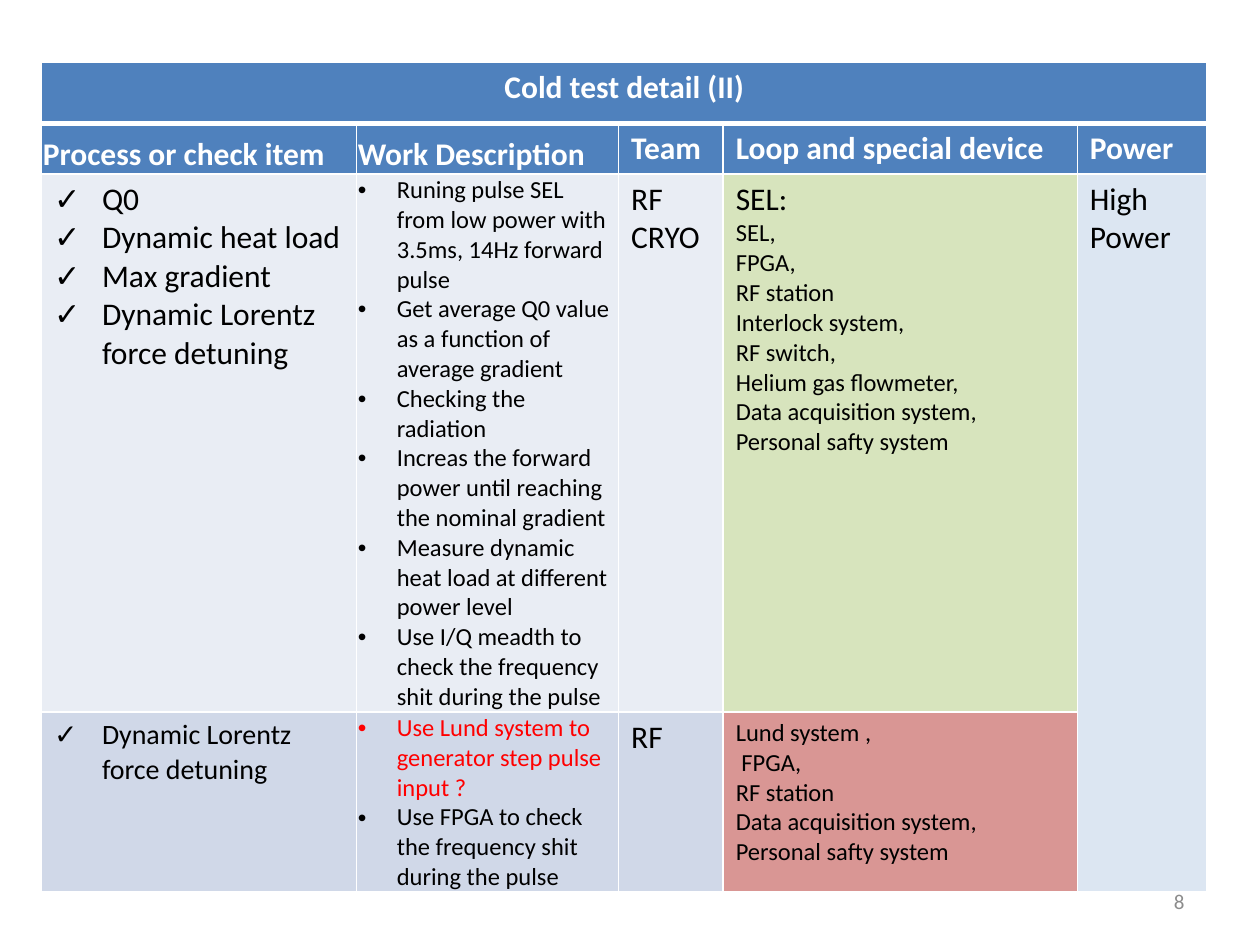
from lxml import etree
from pptx import Presentation
from pptx.dml.color import RGBColor
from pptx.enum.text import MSO_ANCHOR as Anchor, PP_ALIGN as Align
from pptx.oxml.ns import qn
from pptx.util import Inches, Pt

BLUE, WHITE, BLACK, RED, GRAY = "4F81BD", "FFFFFF", "000000", "FF0000", "8C8C8C"
PALE, BAND, GREEN, ROSE, SKY = "E9EDF4", "D0D8E8", "D7E4BD", "D99694", "DCE6F2"
CHECK, DOT = ("✓", 0.38), ("•", 0.31)
COLUMN_WIDTHS = [2.5, 2.08, 0.83, 2.81, 1.03]
ROW_HEIGHTS = [0.49, 0.4, 4.27, 1.43]

HEADERS = ["Process or check item", "Work Description", "Team",
           "Loop and special device", "Power"]
CHECKS = ["Q0", "Dynamic heat load", "Max gradient", "Dynamic Lorentz force detuning"]
PULSE_STEPS = [
    "Runing pulse SEL from low power with 3.5ms, 14Hz forward pulse",
    "Get average Q0 value as a function of average gradient",
    "Checking the radiation",
    "Increas the forward power until reaching the nominal gradient",
    "Measure dynamic heat load at different power level",
    "Use I/Q meadth to check the frequency shit during the pulse",
]
SEL_DEVICES = ["SEL,", "FPGA,", "RF station", "Interlock system,", "RF switch,",
               "Helium gas flowmeter,", "Data acquisition system,", "Personal safty system"]
LUND_DEVICES = ["Lund system ,", " FPGA,", "RF station", "Data acquisition system,",
                "Personal safty system"]
OPEN_QUESTION = "Use Lund system to generator step pulse input ?"
FPGA_STEP = "Use FPGA to check the frequency shit during the pulse"


def rgb(value):
    return RGBColor.from_string(value)


def add_bullet(paragraph, character, indent):
    properties = paragraph._p.get_or_add_pPr()
    properties.set("marL", str(Inches(indent)))
    properties.set("indent", str(-Inches(indent)))
    etree.SubElement(properties, qn("a:buFont"), typeface="Arial")
    etree.SubElement(properties, qn("a:buChar"), char=character)


def add_text(frame, text, size=18, color=BLACK, bold=False, align=Align.LEFT, bullet=None):
    """Fill the empty first paragraph of the frame, or append a new one."""
    paragraph = frame.paragraphs[0]
    if paragraph.runs:
        paragraph = frame.add_paragraph()
    paragraph.alignment = align
    if bullet:
        add_bullet(paragraph, *bullet)
    run = paragraph.add_run()
    run.text = text
    font = run.font
    font.name, font.size, font.bold = "Calibri", Pt(size), bold
    font.color.rgb = rgb(color)


def set_borders(cell, **widths):
    """Draw white lines, 1 pt unless a side (L, R, T, B) is given a width."""
    properties = cell._tc.get_or_add_tcPr()
    for position, side in enumerate("LRTB"):
        line = etree.Element(qn(f"a:ln{side}"), w=str(Pt(widths.get(side, 1))))
        fill = etree.SubElement(line, qn("a:solidFill"))
        etree.SubElement(fill, qn("a:srgbClr"), val=WHITE)
        properties.insert(position, line)


def fill_cell(cell, background, lines, tight=False, **style):
    """Put lines in a cell; a line may be a (text, overrides) pair."""
    cell.fill.solid()
    cell.fill.fore_color.rgb = rgb(background)
    if tight:
        cell.vertical_anchor = Anchor.BOTTOM
        cell.margin_left = cell.margin_right = cell.margin_top = Inches(0.01)
        cell.margin_bottom = 0
    for line in lines:
        text, overrides = (line, {}) if isinstance(line, str) else line
        add_text(cell.text_frame, text, **{**style, **overrides})


def add_test_table(slide, left, top, width, height):
    table = slide.shapes.add_table(len(ROW_HEIGHTS), len(COLUMN_WIDTHS), Inches(left),
                                   Inches(top), Inches(width), Inches(height)).table
    for column, size in zip(table.columns, COLUMN_WIDTHS):
        column.width = Inches(size)
    for row, size in zip(table.rows, ROW_HEIGHTS):
        row.height = Inches(size)
    for index, row in enumerate(table.rows):
        edges = {0: {"B": 3}, 1: {"T": 3}}.get(index, {})
        for cell in row.cells:
            set_borders(cell, **edges)
    table.cell(0, 0).merge(table.cell(0, 4))
    table.cell(2, 4).merge(table.cell(3, 4))

    heading = {"color": WHITE, "bold": True}
    fill_cell(table.cell(0, 0), BLUE, ["Cold test detail (II)"], align=Align.CENTER, **heading)
    for column, text in enumerate(HEADERS):
        fill_cell(table.cell(1, column), BLUE, [text], tight=column < 2, **heading)

    steps = {"tight": True, "size": 14, "bullet": DOT}
    fill_cell(table.cell(2, 0), PALE, CHECKS, bullet=CHECK)
    fill_cell(table.cell(2, 1), PALE, PULSE_STEPS, **steps)
    fill_cell(table.cell(2, 2), PALE, ["RF", "CRYO"])
    fill_cell(table.cell(2, 3), GREEN, [("SEL:", {"size": 18}), *SEL_DEVICES], size=14)
    fill_cell(table.cell(2, 4), SKY, ["High", "Power"])

    fill_cell(table.cell(3, 0), BAND, CHECKS[-1:], size=16, bullet=CHECK)
    fill_cell(table.cell(3, 1), BAND, [(OPEN_QUESTION, {"color": RED}), FPGA_STEP], **steps)
    fill_cell(table.cell(3, 2), BAND, ["RF"])
    fill_cell(table.cell(3, 3), ROSE, LUND_DEVICES, size=14)


def add_page_number(slide, number, left, top, width, height):
    box = slide.shapes.add_textbox(Inches(left), Inches(top), Inches(width), Inches(height))
    frame = box.text_frame
    frame.word_wrap = True
    frame.vertical_anchor = Anchor.MIDDLE
    add_text(frame, str(number), size=12, color=GRAY, align=Align.RIGHT)


def main():
    presentation = Presentation()
    presentation.slide_width, presentation.slide_height = Inches(10), Inches(7.5)
    slide = presentation.slides.add_slide(presentation.slide_layouts[6])
    add_page_number(slide, 8, 7.17, 6.95, 2.33, 0.4)
    add_test_table(slide, 0.33, 0.49, sum(COLUMN_WIDTHS), sum(ROW_HEIGHTS))
    presentation.save("out.pptx")


if __name__ == "__main__":
    main()
